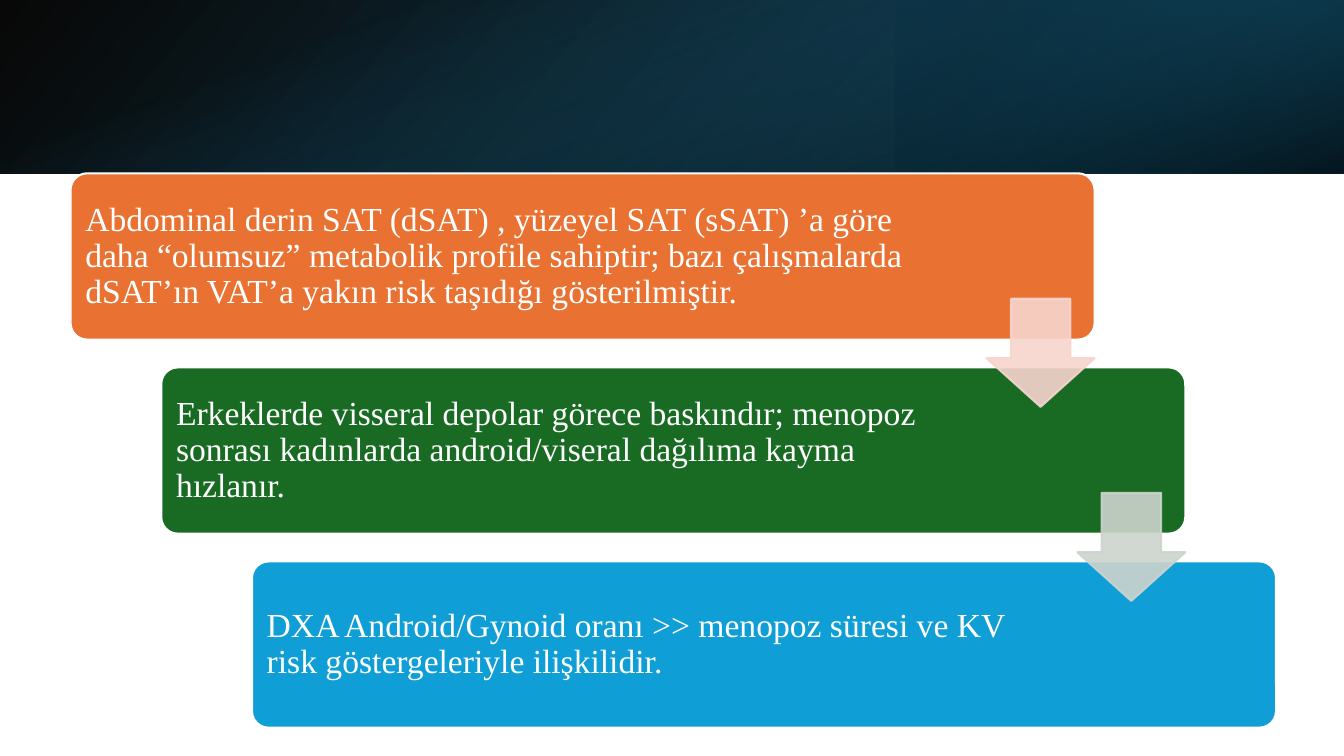
from lxml.etree import SubElement
from pptx import Presentation
from pptx.dml.color import RGBColor
from pptx.enum.shapes import MSO_SHAPE
from pptx.enum.text import MSO_ANCHOR
from pptx.oxml.ns import qn
from pptx.util import Pt

WIDTH, HEIGHT = 960, 540
BANNER_HEIGHT = 123.8
STEP_WIDTH, STEP_HEIGHT = 731.5, 118.8
SHIFT_RIGHT, SHIFT_DOWN = 64.8, 138.6
ARROW_SIZE, ARROW_DROP = 77.2, 89.6

STEPS = [
    ("E97132", 128, "Abdominal derin SAT (dSAT) , yüzeyel SAT (sSAT) ’a göre daha “olumsuz” metabolik "
     "profile sahiptir; bazı çalışmalarda dSAT’ın VAT’a yakın risk taşıdığı gösterilmiştir."),
    ("196B24", 149, "Erkeklerde visseral depolar görece baskındır; menopoz sonrası kadınlarda "
     "android/viseral dağılıma kayma hızlanır."),
    ("0F9ED5", 149, "DXA Android/Gynoid oranı >> menopoz süresi ve KV risk göstergeleriyle ilişkilidir."),
]
ARROW_COLOURS = ["F7D5CE", "CCD4CD"]


def colour(value):
    """Return the colour for a hex string."""
    return RGBColor.from_string(value)


def set_opacity(shape, percents):
    """Give each colour of a shape, in order, its opacity."""
    elements = shape._element.spPr.iter(qn("a:srgbClr"))
    for element, percent in zip(list(elements), percents):
        SubElement(element, qn("a:alpha")).set("val", str(percent * 1000))


def add_preset(page, preset, left, top, width, height):
    """Add a preset shape without shadow."""
    shape = page.shapes.add_shape(preset, Pt(left), Pt(top), Pt(width), Pt(height))
    shape.shadow.inherit = False
    return shape


def paint(shape, value):
    """Apply a solid fill."""
    shape.fill.solid()
    shape.fill.fore_color.rgb = colour(value)


def outline(shape, value):
    """Apply a thin solid outline."""
    shape.line.color.rgb = colour(value)
    shape.line.width = Pt(1.5)


def add_gradient(page, left, top, width, height, angle, stops):
    """Add a rectangle with a clockwise-angled, partly transparent gradient."""
    panel = add_preset(page, MSO_SHAPE.RECTANGLE, left, top, width, height)
    panel.line.fill.background()
    panel.fill.gradient()
    panel.fill.gradient_angle = 360 - angle
    for stop, (position, value, _) in zip(panel.fill.gradient_stops, stops):
        stop.position = position
        stop.color.rgb = colour(value)
    set_opacity(panel, [opacity for _, _, opacity in stops])


def add_banner(page, left, top, width, height):
    """Layer the gradients of the dark banner."""
    add_gradient(page, left, top, width, height, 40, [(0, "000000", 96), (1, "104862", 96)])
    add_gradient(page, left + width * 2 / 3, top, width / 3, height, 40,
                 [(0.19, "0B3041", 68), (1, "156082", 79)])
    add_gradient(page, left, top, width, height, 70, [(0.23, "156082", 0), (0.99, "000000", 74)])


def add_step(page, left, top, fill, right_margin, text):
    """Add one rounded box with its statement."""
    box = add_preset(page, MSO_SHAPE.ROUNDED_RECTANGLE, left, top, STEP_WIDTH, STEP_HEIGHT)
    box.adjustments[0] = 0.1
    paint(box, fill)
    outline(box, "FFFFFF")
    frame = box.text_frame
    frame.word_wrap = True
    frame.vertical_anchor = MSO_ANCHOR.MIDDLE
    frame.margin_left = frame.margin_top = frame.margin_bottom = Pt(7.2)
    frame.margin_right = Pt(right_margin)
    para = frame.paragraphs[0]
    para.text = text
    para.alignment = 1
    para.line_spacing = 0.9
    para.font.name = "Times New Roman"
    para.font.size = Pt(24)
    para.font.color.rgb = colour("FFFFFF")


def add_arrow(page, left, top, value):
    """Add a translucent arrow leading to the next step."""
    arrow = add_preset(page, MSO_SHAPE.DOWN_ARROW, left, top, ARROW_SIZE, ARROW_SIZE)
    arrow.adjustments[0] = 0.55
    arrow.adjustments[1] = 0.45
    paint(arrow, value)
    outline(arrow, value)
    set_opacity(arrow, [90, 90])


def add_staircase(page, left, top):
    """Place the descending steps, then the arrows between them."""
    corners = [(left + index * SHIFT_RIGHT, top + index * SHIFT_DOWN) for index in range(len(STEPS))]
    for (x, y), step in zip(corners, STEPS):
        add_step(page, x, y, *step)
    for (x, y), value in zip(corners, ARROW_COLOURS):
        add_arrow(page, x + STEP_WIDTH - ARROW_SIZE, y + ARROW_DROP, value)


def main():
    """Build and save the deck."""
    deck = Presentation()
    deck.slide_width, deck.slide_height = Pt(WIDTH), Pt(HEIGHT)
    page = deck.slides.add_slide(deck.slide_layouts[6])
    add_banner(page, 0, 0, WIDTH, BANNER_HEIGHT)
    add_staircase(page, 50.4, BANNER_HEIGHT)
    deck.save("out.pptx")


if __name__ == "__main__":
    main()
